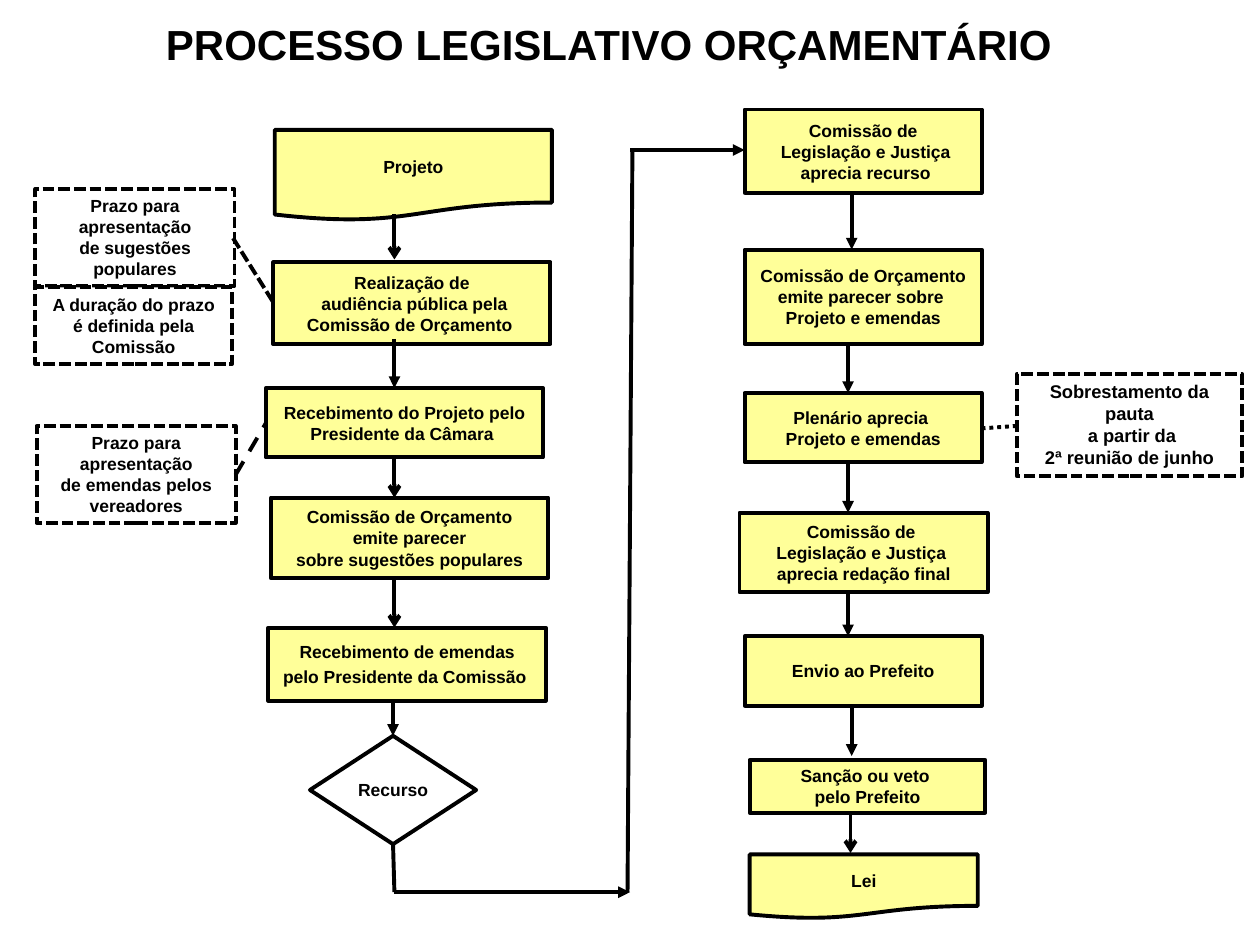
from lxml import etree
from pptx import Presentation
from pptx.dml.color import RGBColor
from pptx.enum.dml import MSO_LINE
from pptx.enum.shapes import MSO_CONNECTOR, MSO_SHAPE
from pptx.enum.text import MSO_ANCHOR, PP_ALIGN
from pptx.oxml.ns import qn
from pptx.util import Pt

RECT = MSO_SHAPE.RECTANGLE
DOCUMENT = MSO_SHAPE.FLOWCHART_DOCUMENT
DECISION = MSO_SHAPE.FLOWCHART_DECISION
STRAIGHT = MSO_CONNECTOR.STRAIGHT
SYS_DASH, SYS_DOT, DASH = MSO_LINE.SQUARE_DOT, MSO_LINE.ROUND_DOT, MSO_LINE.DASH
CENTER, LEFT = PP_ALIGN.CENTER, PP_ALIGN.LEFT
MIDDLE, TOP = MSO_ANCHOR.MIDDLE, MSO_ANCHOR.TOP

BLACK, WHITE, YELLOW = "000000", "FFFFFF", "FFFF99"
STEP_W = 158.4          # steps of the left column
REVIEW_X, REVIEW_W = 425.5, 135.4  # steps of the right column
LEFT_AXIS, RIGHT_AXIS = 225.4, 484.6
OUTLINE = 2.25

# Steps: shape, left, top, width, height, fill, text
STEPS = [
    (DOCUMENT, 157, 74.2, STEP_W, 51.8, YELLOW, "Projeto"),
    (RECT, 156.2, 149.8, STEP_W, 46.8, YELLOW,
     "Realização de\n audiência pública pela\nComissão de Orçamento "),
    (RECT, 151.9, 221.8, STEP_W, 39.6, YELLOW,
     "Recebimento do Projeto pelo\nPresidente da Câmara "),
    (RECT, 154.8, 284.4, STEP_W, 46.1, YELLOW,
     "Comissão de Orçamento\nemite parecer\nsobre sugestões populares"),
    (DECISION, 177.1, 420.5, 95, 61.9, WHITE, "Recurso"),
    (RECT, REVIEW_X, 62.6, REVIEW_W, 47.5, YELLOW,
     "Comissão de\n Legislação e Justiça\n aprecia recurso"),
    (RECT, REVIEW_X, 142.6, REVIEW_W, 54, YELLOW,
     "Comissão de Orçamento\nemite parecer sobre \nProjeto e emendas"),
    (RECT, REVIEW_X, 224.6, REVIEW_W, 39.6, YELLOW,
     "Plenário aprecia \nProjeto e emendas"),
    (RECT, 422.6, 293, 141.8, 45.4, YELLOW,
     "Comissão de \nLegislação e Justiça \naprecia redação final"),
    (RECT, REVIEW_X, 363.6, REVIEW_W, 39.6, YELLOW, "Envio ao Prefeito"),
    (RECT, 428.4, 434.2, 134.6, 30.2, YELLOW, "Sanção ou veto \npelo Prefeito"),
    (DOCUMENT, 428.4, 488.2, 130.3, 36.7, YELLOW, "Lei"),
]
AMENDMENTS = (RECT, 153.4, 358.6, STEP_W, 41.8, YELLOW,
              "Recebimento de emendas\npelo Presidente da Comissão ")

# Deadline notes: left, top, width, height, text, font size
NOTES = [
    (20.9, 243.4, 113.8, 55.4,
     "Prazo para apresentação\nde emendas pelos vereadores", 10),
    (20.2, 108, 113.8, 55.4,
     "Prazo para apresentação\nde sugestões populares", 10),
    (20.2, 164.2, 112.3, 43.9,
     "A duração do prazo é definida pela Comissão", 10),
    (581, 213.8, 128.9, 58.3,
     "Sobrestamento da pauta\n a partir da\n2ª reunião de junho", 10.5),
]

# Downward arrows: x, start, end, arrowhead
DOWN_ARROWS = [
    (LEFT_AXIS, 122.4, 148.3, "arrow"),
    (LEFT_AXIS, 193.7, 221.8, "triangle"),
    (LEFT_AXIS, 262.1, 284.4, "arrow"),
    (LEFT_AXIS, 331.2, 358.6, "arrow"),
    (224.6, 400.3, 420.5, "triangle"),
    (486.7, 110.9, 142.6, "triangle"),
    (RIGHT_AXIS, 196.6, 224.6, "triangle"),
    (RIGHT_AXIS, 264.2, 293, "triangle"),
    (RIGHT_AXIS, 337.7, 363.6, "triangle"),
    (486.7, 403.9, 432, "triangle"),
    (486, 464.4, 487.4, "arrow"),
]

# Appeal route from the decision to the right column: ends, arrowhead
APPEAL_ROUTE = [
    ((224.6, 482.4), (LEFT_AXIS, 509.8), None),
    ((LEFT_AXIS, 509.8), (360, 509.8), "triangle"),
    ((358.6, 509.8), (361.4, 85.7), None),
    ((360, 85.7), (REVIEW_X, 85.7), "triangle"),
]

# Links between notes and steps: ends, dash
NOTE_LINKS = [
    ((133.2, 136.1), (156.2, 172.8), SYS_DASH),
    ((134.6, 271.4), (151.9, 241.9), DASH),
    ((581, 243.4), (560.9, 244.8), SYS_DOT),
]


def color(hex_value):
    return RGBColor.from_string(hex_value)


def write_text(shape, text, size, align=CENTER, anchor=MIDDLE, wrap=False):
    frame = shape.text_frame
    frame.text = text
    frame.word_wrap = wrap
    frame.vertical_anchor = anchor
    for paragraph in frame.paragraphs:
        paragraph.alignment = align
        for run in paragraph.runs:
            run.font.name = "Arial"
            run.font.size = Pt(size)
            run.font.bold = True
            run.font.color.rgb = color(BLACK)


def set_outline(line, dash=None):
    line.color.rgb = color(BLACK)
    line.width = Pt(OUTLINE)
    if dash is not None:
        line.dash_style = dash


def add_box(slide, kind, left, top, width, height, fill, dash=None):
    box = slide.shapes.add_shape(kind, Pt(left), Pt(top), Pt(width), Pt(height))
    box.shadow.inherit = False
    box.fill.solid()
    box.fill.fore_color.rgb = color(fill)
    set_outline(box.line, dash)
    return box


def add_step(slide, kind, left, top, width, height, fill, text):
    step = add_box(slide, kind, left, top, width, height, fill)
    write_text(step, text, 10)
    return step


def add_note(slide, left, top, width, height, text, size):
    note = add_box(slide, RECT, left, top, width, height, WHITE, SYS_DASH)
    write_text(note, text, size, anchor=TOP, wrap=True)


def add_link(slide, start, end, head=None, dash=None):
    points = [Pt(value) for value in (*start, *end)]
    link = slide.shapes.add_connector(STRAIGHT, *points)
    set_outline(link.line, dash)
    properties = link._element.spPr
    if head:
        etree.SubElement(properties.find(qn("a:ln")), qn("a:tailEnd"), type=head)
    etree.SubElement(properties, qn("a:effectLst"))


def add_title(slide, text):
    title = slide.shapes.add_textbox(Pt(87.8), Pt(7.2), Pt(525.6), Pt(36))
    write_text(title, text, 24, align=LEFT, anchor=TOP)


def main():
    prs = Presentation()
    prs.slide_width, prs.slide_height = Pt(720), Pt(540)
    slide = prs.slides.add_slide(prs.slide_layouts[6])

    add_title(slide, "PROCESSO LEGISLATIVO ORÇAMENTÁRIO")

    # Steps of the process
    for step in STEPS:
        add_step(slide, *step)
    amendments = add_step(slide, *AMENDMENTS)
    for paragraph in amendments.text_frame.paragraphs:
        paragraph.space_before = Pt(2.3)

    # Deadline notes
    for note in NOTES:
        add_note(slide, *note)

    # Arrows and links
    for x, start, end, head in DOWN_ARROWS:
        add_link(slide, (x, start), (x, end), head)
    for start, end, head in APPEAL_ROUTE:
        add_link(slide, start, end, head)
    for start, end, dash in NOTE_LINKS:
        add_link(slide, start, end, dash=dash)

    prs.save("out.pptx")


if __name__ == "__main__":
    main()
